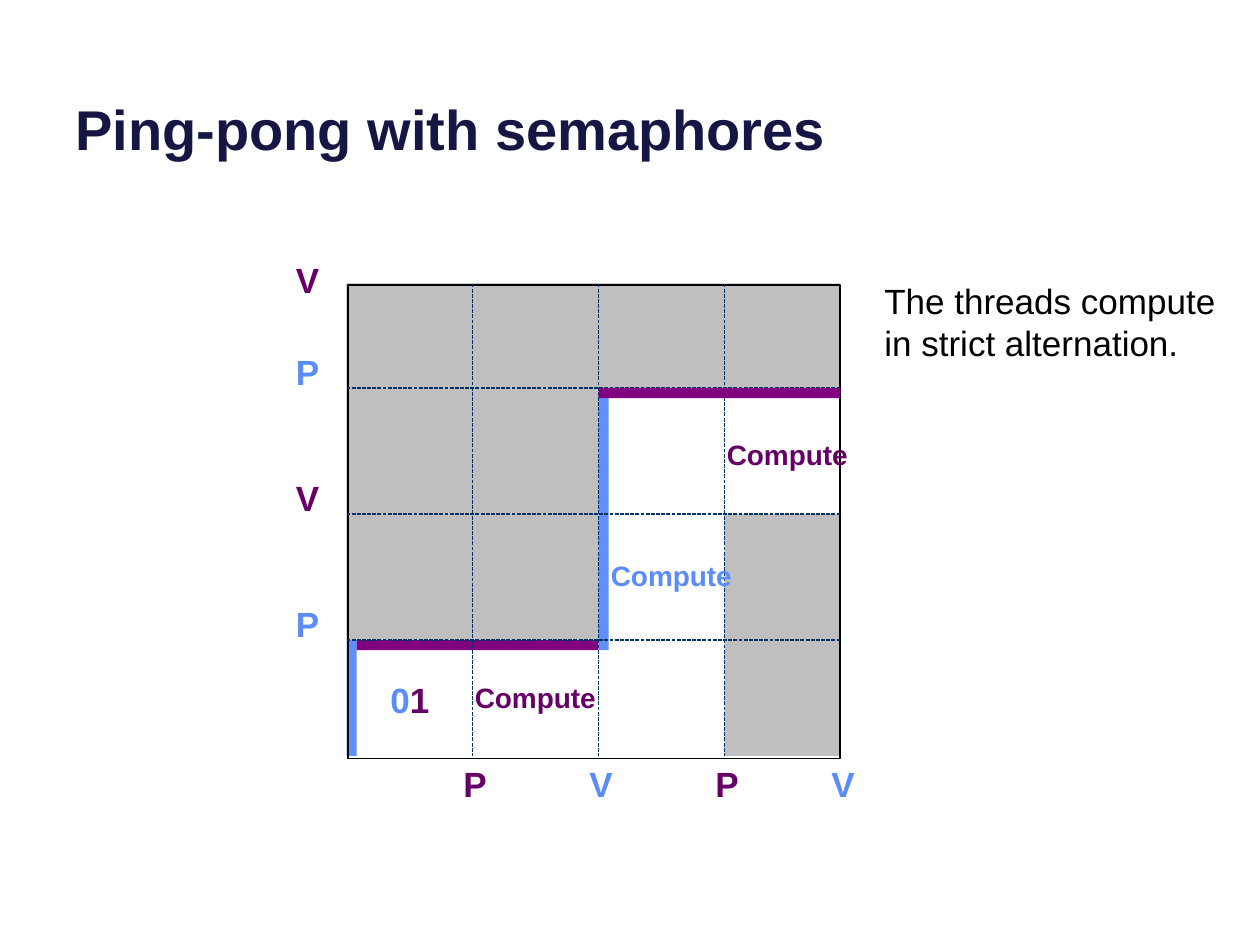
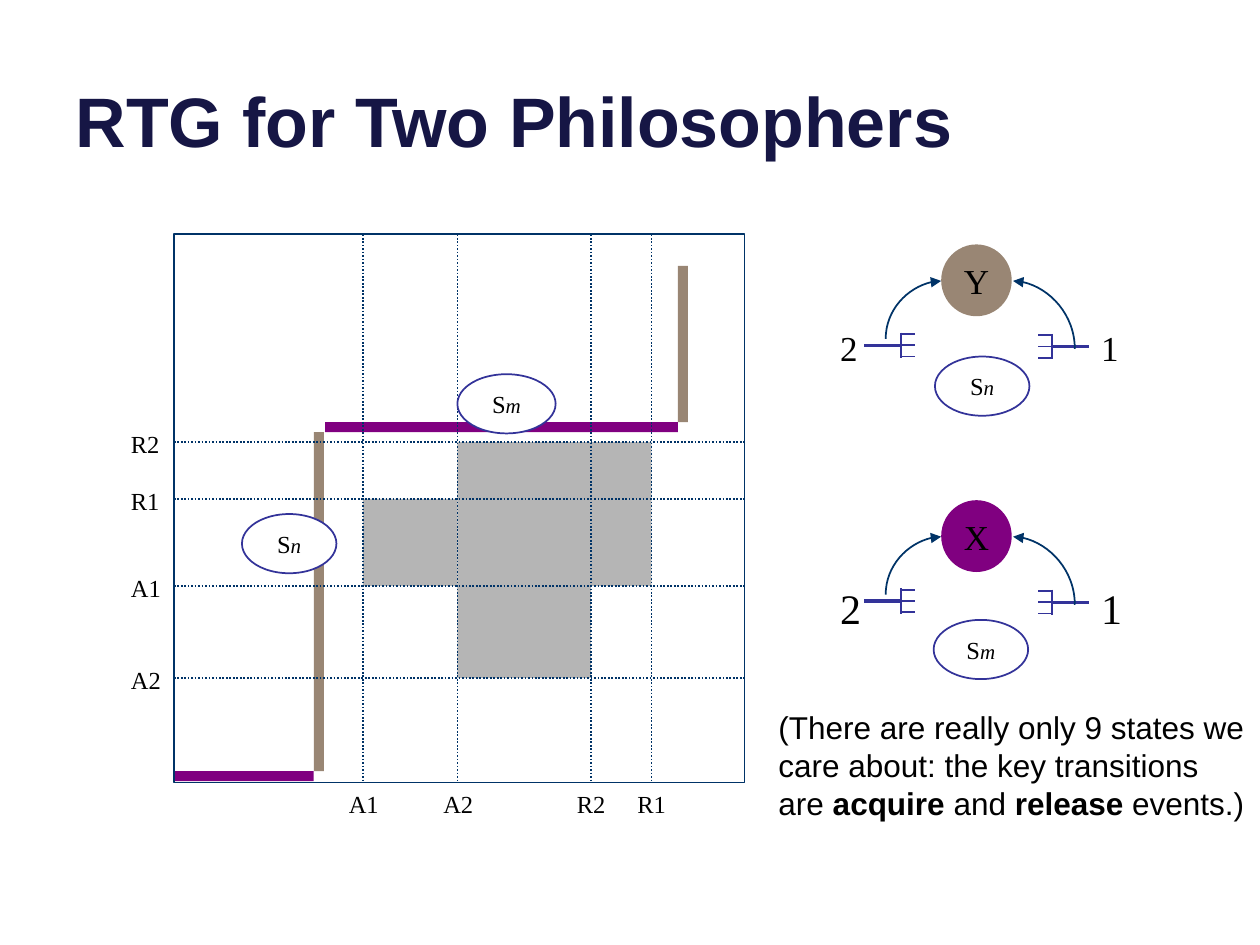
from lxml import etree
from pptx import Presentation
from pptx.dml.color import RGBColor
from pptx.enum.dml import MSO_LINE
from pptx.enum.shapes import MSO_CONNECTOR, MSO_SHAPE
from pptx.enum.text import MSO_ANCHOR, MSO_AUTO_SIZE, PP_ALIGN
from pptx.oxml.ns import qn
from pptx.util import Inches, Pt

RECT, OVAL = MSO_SHAPE.RECTANGLE, MSO_SHAPE.OVAL
STRAIGHT, CURVE = MSO_CONNECTOR.STRAIGHT, MSO_CONNECTOR.CURVE
DASH, DOT = MSO_LINE.SQUARE_DOT, MSO_LINE.ROUND_DOT
TOP, MIDDLE, BOTTOM = MSO_ANCHOR.TOP, MSO_ANCHOR.MIDDLE, MSO_ANCHOR.BOTTOM
LEFT, CENTER = PP_ALIGN.LEFT, PP_ALIGN.CENTER
NO_FIT = MSO_AUTO_SIZE.NONE

SANS, SERIF = "Arial", "Times New Roman"
NAVY, TEAL, INDIGO = "161645", "003367", "333399"
BLUE_TEXT, BLUE_BAR = "5A8DFB", "618FFD"
PURPLE_TEXT, PURPLE = "660066", "800080"
TAN, BLACK, WHITE = "998674", "000000", "FFFFFF"
BAR = 0.08


def rgb(value):
    return RGBColor.from_string(value)


def add_run(p, text, size=20, font=SANS, color=BLACK, bold=False, italic=False):
    r = p.add_run()
    r.text = text
    r.font.size = Pt(size)
    r.font.name = font
    r.font.color.rgb = rgb(color)
    r.font.bold = bold
    r.font.italic = italic


class Deck:
    def __init__(self):
        self.prs = Presentation()
        self.prs.slide_width = Inches(10)
        self.prs.slide_height = Inches(7.5)
        self.s = None

    def new_slide(self, title, size):
        self.s = self.prs.slides.add_slide(self.prs.slide_layouts[5])
        sp = self.s.shapes.title
        sp.left, sp.top = Inches(0.5), Inches(-0.37)
        sp.width, sp.height = Inches(9), Inches(1.7)
        self.set_text(sp, [[(title, dict(size=size, color=NAVY, bold=True))]], BOTTOM)

    def set_text(self, sp, paragraphs, anchor=MIDDLE, align=LEFT, wrap=True):
        tf = sp.text_frame
        tf.word_wrap = wrap
        tf.auto_size = NO_FIT
        tf.vertical_anchor = anchor
        for i, runs in enumerate(paragraphs):
            p = tf.add_paragraph() if i else tf.paragraphs[0]
            p.alignment = align
            for text, style in runs:
                add_run(p, text, **style)

    def shape(self, x, y, w, h, fill=None, line=None, kind=RECT):
        sp = self.s.shapes.add_shape(kind, Inches(x), Inches(y), Inches(w), Inches(h))
        sp.shadow.inherit = False
        if fill:
            sp.fill.solid()
            sp.fill.fore_color.rgb = rgb(fill)
        else:
            sp.fill.background()
        if line:
            sp.line.color.rgb = rgb(line)
            sp.line.width = Pt(1)
        else:
            sp.line.fill.background()
        return sp

    def block(self, x1, y1, x2, y2, fill):
        self.shape(x1, y1, x2 - x1, y2 - y1, fill)

    def text(self, x, y, w, h, text, anchor=MIDDLE, wrap=True, **style):
        sp = self.s.shapes.add_textbox(Inches(x), Inches(y), Inches(w), Inches(h))
        paragraphs = [[(text, style)]] if isinstance(text, str) else text
        self.set_text(sp, paragraphs, anchor, wrap=wrap)

    def line(self, x1, y1, x2, y2, color=TEAL, width=1, dash=None, kind=STRAIGHT):
        sp = self.s.shapes.add_connector(kind, Inches(x1), Inches(y1), Inches(x2), Inches(y2))
        sp.line.color.rgb = rgb(color)
        sp.line.width = Pt(width)
        if dash:
            sp.line.dash_style = dash
        etree.SubElement(sp._element.spPr, qn("a:effectLst"))
        return sp

    def arc_arrow(self, tip_x, tip_y, x, y):
        sp = self.line(tip_x, tip_y, x, y, kind=CURVE)
        spPr = sp._element.spPr
        spPr.find(qn("a:prstGeom")).set("prst", "curvedConnector2")
        etree.SubElement(spPr.find(qn("a:ln")), qn("a:headEnd"), type="triangle")

    def fork(self, spine, y, side):
        self.line(spine, y, spine + side * 0.29, y, INDIGO, 1.75)
        self.line(spine, y - 0.1, spine, y + 0.1, INDIGO)
        for dy in (-0.09, 0, 0.09):
            self.line(spine - side * 0.11, y + dy, spine, y + dy, INDIGO)

    def resource(self, y, name, fill, size, box):
        for x, number in ((8.64, "1"), (6.57, "2")):
            self.text(x, y + 0.6, box[0], box[1], number, TOP, False, size=size, font=SERIF)
        sp = self.shape(7.47, y, 0.56, 0.57, fill, kind=OVAL)
        self.set_text(sp, [[(name, dict(font=SERIF))]], align=CENTER)
        self.fork(7.15, y + 0.8, -1)
        self.fork(8.35, y + 0.81, 1)
        self.arc_arrow(8.04, y + 0.29, 8.53, y + 0.83)
        self.arc_arrow(7.47, y + 0.29, 7.03, y + 0.75)

    def state(self, x, y, w, sub):
        sp = self.shape(x, y, w, 0.47, WHITE, INDIGO, OVAL)
        runs = [("S", dict(size=14, font=SERIF)),
                (sub, dict(size=12, font=SERIF, italic=True))]
        self.set_text(sp, [runs], align=CENTER)


def ping_pong(d):
    d.new_slide("Ping-pong with semaphores", 32)
    left, top, right, bottom = 2.75, 2.25, 6.67, 6
    cols, rows = (3.75, 4.75, 5.75), (3.08, 4.08, 5.08)
    for area in ((left, top, cols[1], rows[2]),
                 (cols[2], rows[1], right, bottom),
                 (cols[0], top, right, rows[0])):
        d.block(*area, "BFBFBF")

    d.block(left, rows[2], left + BAR, bottom, BLUE_BAR)
    d.block(left + BAR, rows[2], cols[1], rows[2] + BAR, PURPLE)
    d.shape(2.76, 2.26, 3.91, 3.76, line=BLACK)
    d.block(cols[1], rows[0], cols[1] + BAR, rows[2] + BAR, BLUE_BAR)
    for y in rows:
        d.line(left, y, right, y, width=0.75, dash=DASH)
    for x in cols:
        d.line(x, top, x, bottom, width=0.75, dash=DASH)
    d.block(cols[1], rows[0], right, rows[0] + BAR, PURPLE)

    sp = d.shape(3, 5.33, 0.58, 0.44, WHITE)
    d.set_text(sp, [[("0", dict(color=BLUE_TEXT, bold=True)),
                     ("1", dict(color=PURPLE_TEXT, bold=True))]])
    for y, op in zip((4.73, 3.73, 2.73, 2), "PVPV"):
        color = BLUE_TEXT if op == "P" else PURPLE_TEXT
        d.text(2.25, y, 0.75, 0.44, op, color=color, bold=True)
    for x, op in zip((3.58, 4.58, 5.58, 6.5), "PVPV"):
        color = PURPLE_TEXT if op == "P" else BLUE_TEXT
        d.text(x, 6, 0.75, 0.44, op, color=color, bold=True)
    for x, y, color in ((4.75, 4.38, BLUE_TEXT),
                        (3.67, 5.35, PURPLE_TEXT),
                        (5.67, 3.42, PURPLE_TEXT)):
        d.text(x, y, 1.5, 0.37, "Compute", size=16, color=color, bold=True)
    d.text(6.92, 2.17, 3.08, 0.77, "The threads compute in strict alternation.")


def philosophers(d):
    d.new_slide("RTG for Two Philosophers", 40)
    left, top, right, bottom = 1.38, 1.86, 5.91, 6.21
    cols = {"A1": 2.88, "A2": 3.63, "R2": 4.69, "R1": 5.17}
    rows = {"A2": 5.38, "A1": 4.65, "R1": 3.96, "R2": 3.51}
    for x1, y1, x2, y2 in (("A1", "R1", "A2", "A1"), ("A2", "R2", "R1", "A1"),
                           ("A2", "A1", "R2", "A2")):
        d.block(cols[x1], rows[y1], cols[x2], rows[y2], "B5B5B5")

    d.block(2.49, 3.43, 2.49 + BAR, 6.12, TAN)
    d.block(2.58, 3.35, 5.38, 3.35 + BAR, PURPLE)
    d.block(5.38, 2.11, 5.38 + BAR, 3.35, TAN)
    d.block(left, 6.12, 2.49, 6.12 + BAR, PURPLE)
    d.shape(left, top, right - left, bottom - top, line=TEAL)

    label = dict(anchor=TOP, wrap=False, size=14, font=SERIF)
    for event, x in cols.items():
        d.line(x, top, x, bottom, dash=DOT)
        d.text(x - 0.21, bottom, 0.44, 0.33, event, **label)
    for event, y in rows.items():
        d.line(left, y, right, y, dash=DOT)
        d.text(0.94, y - 0.15, 0.44, 0.33, event, **label)

    d.resource(1.94, "Y", TAN, 20, (0.34, 0.44))
    d.resource(3.97, "X", PURPLE, 24, (0.37, 0.51))
    for x, y, w, sub in ((1.92, 4.08, 0.75, "n"), (3.63, 2.97, 0.78, "m"),
                         (7.42, 2.83, 0.75, "n"), (7.41, 4.92, 0.75, "m")):
        d.state(x, y, w, sub)

    plain, strong = dict(size=18), dict(size=18, bold=True)
    d.text(6.08, 5.57, 3.92, 1.01, [
        [("(There are really only 9 states we", plain)],
        [("care about: the key transitions are ", plain), ("acquire", strong),
         (" and ", plain), ("release", strong), (" events.)", plain)],
    ], TOP)


def main():
    d = Deck()
    ping_pong(d)
    philosophers(d)
    d.prs.save("out.pptx")


if __name__ == "__main__":
    main()
